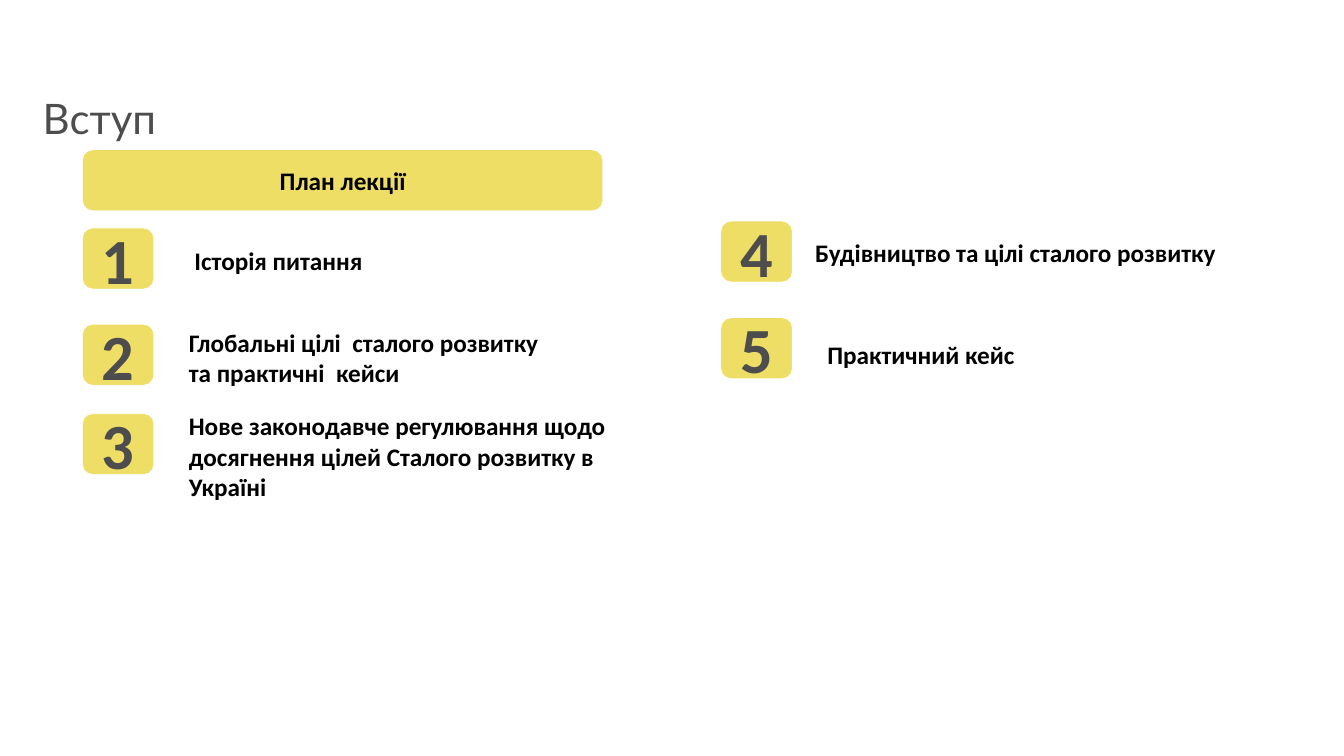
from pptx import Presentation
from pptx.dml.color import RGBColor
from pptx.enum.shapes import MSO_SHAPE
from pptx.enum.text import MSO_ANCHOR, MSO_AUTO_SIZE, PP_ALIGN
from pptx.util import Cm, Pt

YELLOW, GREY, BLACK = "EEDE66", "4D4D4D", "000000"
BADGE_WIDTH, BAR_HEIGHT = 3.53, 3
LEFT_COLUMN, RIGHT_COLUMN = 4.19, 36.37


def write(shape, text, size, color, font="Calibri", bold=True, align=PP_ALIGN.LEFT):
    """Set the text of a shape and format its single paragraph."""
    shape.text_frame.text = text
    paragraph = shape.text_frame.paragraphs[0]
    paragraph.alignment = align
    for run in paragraph.runs:
        run.font.name = font
        run.font.size = Pt(size)
        run.font.bold = bold
        run.font.color.rgb = RGBColor.from_string(color)


def add_yellow_box(left, top, width, text, size, color):
    box = slide.shapes.add_shape(
        MSO_SHAPE.ROUNDED_RECTANGLE, Cm(left), Cm(top), Cm(width), Cm(BAR_HEIGHT))
    box.shadow.inherit = False
    box.fill.solid()
    box.fill.fore_color.rgb = RGBColor.from_string(YELLOW)
    box.line.color.rgb = RGBColor.from_string(YELLOW)
    box.line.width = Pt(1)
    box.text_frame.vertical_anchor = MSO_ANCHOR.MIDDLE
    write(box, text, size, color, align=PP_ALIGN.CENTER)


presentation = Presentation()
presentation.slide_width = Cm(67.74)
presentation.slide_height = Cm(38.1)
slide = presentation.slides.add_slide(presentation.slide_layouts[5])

title = slide.shapes.title
title.left, title.top, title.width, title.height = Cm(1.9), Cm(4.83), Cm(40.59), Cm(2.29)
title.text_frame.vertical_anchor = MSO_ANCHOR.TOP
title.text_frame.auto_size = MSO_AUTO_SIZE.NONE
write(title, "Вступ", 60, GREY, font="Lato", bold=False)
title.text_frame.paragraphs[0].line_spacing = 0.9

add_yellow_box(LEFT_COLUMN, 7.59, 26.16, "План лекції", 36, BLACK)

# Badge left and top, then the text's left, top, width, height, wrapping and alignment
topics = [
    (LEFT_COLUMN, 11.53, 9.55, 12.22, 22.89, 1.8, True, PP_ALIGN.LEFT,
     "Історія питання"),
    (LEFT_COLUMN, 16.38, 9.27, 16.38, 22.89, 3.33, True, PP_ALIGN.LEFT,
     "Глобальні цілі  сталого розвитку \vта практичні  кейси"),
    (LEFT_COLUMN, 20.88, 9.27, 20.57, 24.56, 4.88, True, PP_ALIGN.LEFT,
     "Нове законодавче регулювання щодо досягнення цілей Сталого розвитку в Україні"),
    (RIGHT_COLUMN, 11.18, 40.84, 11.84, 22.89, 1.8, True, PP_ALIGN.JUSTIFY,
     "Будівництво та цілі сталого розвитку"),
    (RIGHT_COLUMN, 16.05, 41.45, 16.99, 10.03, 1.8, False, PP_ALIGN.LEFT,
     "Практичний кейс"),
]
for number, topic in enumerate(topics, start=1):
    badge_left, badge_top, left, top, width, height, wrap, align, text = topic
    add_yellow_box(badge_left, badge_top, BADGE_WIDTH, str(number), 92, GREY)
    label = slide.shapes.add_textbox(Cm(left), Cm(top), Cm(width), Cm(height))
    label.text_frame.word_wrap = wrap
    label.text_frame.auto_size = MSO_AUTO_SIZE.SHAPE_TO_FIT_TEXT
    write(label, text, 36, BLACK, align=align)

presentation.save("out.pptx")
